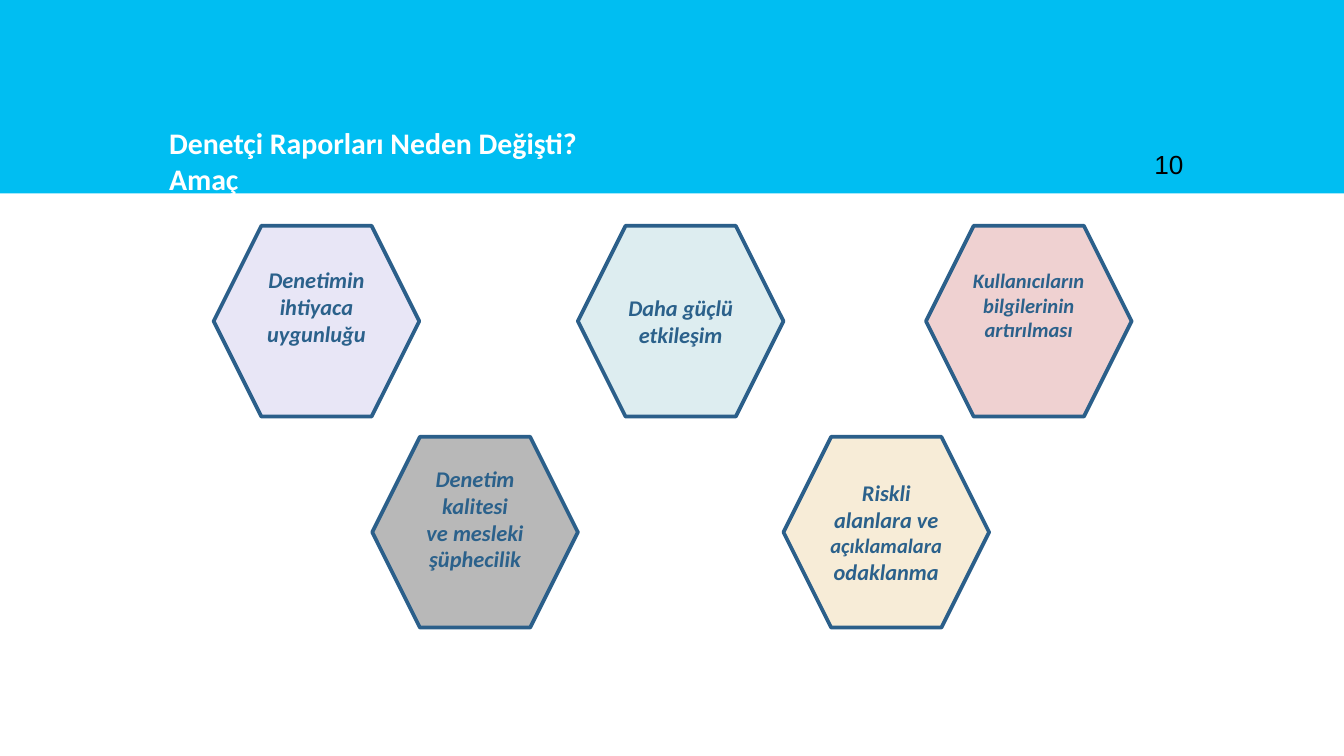
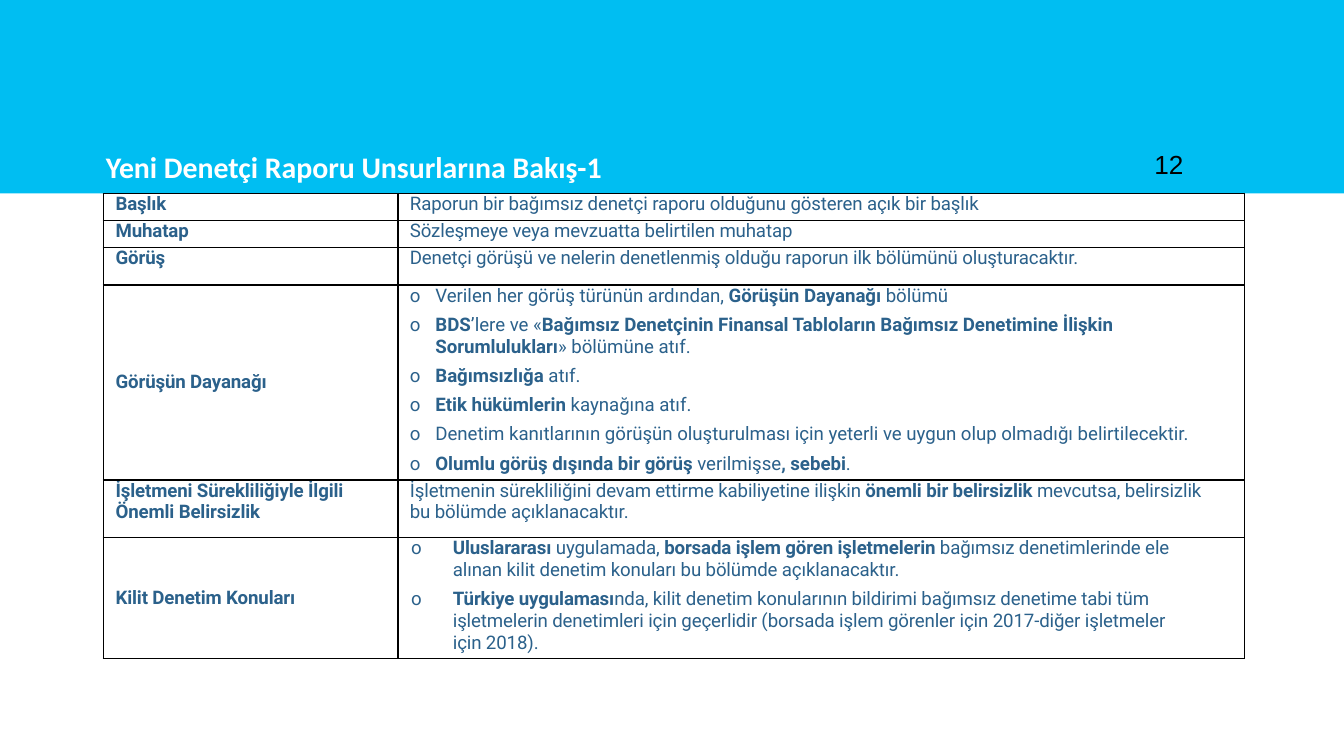
from lxml import etree
from pptx import Presentation
from pptx import util as u
from pptx.dml.color import RGBColor
from pptx.enum import shapes, text
from pptx.oxml import ns

PX = 9144  # EMU per px, 100 px to the inch
MID, LOW = text.MSO_ANCHOR.MIDDLE, text.MSO_ANCHOR.BOTTOM
TOP = text.MSO_ANCHOR.TOP
CYAN, WHITE, BLACK = "00BEF2", "FFFFFF", "000000"
INK, EDGE = "2B618B", "2B5F8A"


def px(n):
    return u.Emu(n * PX)


def rgb(code):
    return RGBColor.from_string(code)


def sub(node, tag, **attrs):
    return etree.SubElement(node, ns.qn(tag), attrs)


class Deck:
    def __init__(self):
        self.prs = Presentation()
        self.prs.slide_width = px(1000)
        self.prs.slide_height = px(1000) * 9 // 16
        self.slide = None

    # Slide with its band, title and number
    def page(self, title, at, num, pad=10):
        self.slide = self.prs.slides.add_slide(self.prs.slide_layouts[6])
        self.shape(shapes.MSO_SHAPE.RECTANGLE, (0, 0, 1000, 144), CYAN)
        self.label(title, at, "Calibri", 16, WHITE, True, pad)
        self.label(num, (849, 71, 60, 73), "Arial", 14, BLACK)

    def shape(self, kind, at, fill, line=None):
        item = self.slide.shapes.add_shape(kind, *map(px, at))
        item.shadow.inherit = False
        item.fill.solid()
        item.fill.fore_color.rgb = rgb(fill)
        if line:
            item.line.color.rgb = rgb(line)
            item.line.width = u.Pt(2)
        else:
            item.line.fill.background()
        return item

    def run(self, para, words, font, size, color, bold=False, slant=False):
        run = para.add_run()
        run.text = words
        run.font.name, run.font.size = font, u.Pt(size)
        run.font.bold, run.font.italic = bold, slant
        run.font.color.rgb = rgb(color)
        return run

    def label(self, words, at, font, size, color, bold=False, pad=10):
        frame = self.slide.shapes.add_textbox(*map(px, at)).text_frame
        frame.word_wrap = True
        frame.vertical_anchor = LOW
        frame.margin_left = frame.margin_right = frame.margin_top = px(10)
        frame.margin_bottom = px(pad)
        para = frame.paragraphs[0]
        for i, line in enumerate(words.split("\n")):
            if i:
                para.add_line_break()
            self.run(para, line, font, size, color, bold)

    # Hexagon; each paragraph is a list of (words, size)
    def hexa(self, left, top, fill, paras, anchor=MID, pad=5):
        item = self.shape(shapes.MSO_SHAPE.HEXAGON, (left, top, 153, 142), fill, EDGE)
        frame = item.text_frame
        frame.word_wrap = True
        frame.vertical_anchor = anchor
        frame.margin_bottom = px(pad)
        for i, runs in enumerate(paras):
            para = frame.add_paragraph() if i else frame.paragraphs[0]
            para.alignment = text.PP_ALIGN.CENTER
            for words, size in runs:
                self.run(para, words, "Calibri", size, INK, True, True)

    # Cell text: parts between asterisks are bold
    def cell(self, cell, lines, anchor=TOP, left=9, hang=0, right=0, track=-5):
        cell.margin_left = cell.margin_right = px(0)
        cell.margin_top = cell.margin_bottom = px(0)
        cell.vertical_anchor = anchor
        props = cell._tc.get_or_add_tcPr()
        for side in "LRTB":
            edge = sub(props, f"a:ln{side}", w="12700")
            sub(sub(edge, "a:solidFill"), "a:srgbClr", val=BLACK)
        cell.fill.background()
        for i, line in enumerate(lines):
            para = cell.text_frame.add_paragraph() if i else cell.text_frame.paragraphs[0]
            ppr = para._p.get_or_add_pPr()
            for name, size in (("marL", left), ("marR", right), ("indent", -hang)):
                ppr.set(name, str(size * PX))
            if hang:
                sub(ppr, "a:buFont", typeface="Roboto")
                sub(ppr, "a:buChar", char="o")
                para.space_after = u.Pt(2)
                if i:
                    para.space_before = u.Pt(2)
            for k, words in enumerate(line.split("*")):
                if words:
                    run = self.run(para, words, "Roboto", 10, INK, k % 2 == 1)
                    run._r.get_or_add_rPr().set("spc", str(track))

    # Table; each row is (height, head, lines, text style)
    def table(self, at, cols, rows):
        grid = self.slide.shapes.add_table(len(rows), len(cols), *map(px, at)).table
        grid.first_row = grid.horz_banding = False
        for col, width in zip(grid.columns, cols):
            col.width = px(width)
        for i, (height, head, lines, style) in enumerate(rows):
            grid.rows[i].height = px(height)
            self.cell(grid.cell(i, 0), [f"*{head}*"], MID if "hang" in style else TOP)
            self.cell(grid.cell(i, 1), lines, **style)


def main():
    deck = Deck()

    # Slide 1: aims
    deck.page("Denetçi Raporları Neden Değişti?\nAmaç", (116, 82, 780, 101), "10", 37)
    deck.hexa(159, 168, "E8E6F6", [[("Denetimin ihtiyaca uygunluğu", 12)]], LOW, 29)
    deck.hexa(430, 168, "DDEDF0", [[("Daha güçlü etkileşim", 12)]])
    deck.hexa(689, 168, "EFD1D1", [[("Kullanıcıların bilgilerinin artırılması", 11)]], pad=29)
    deck.hexa(277, 325, "B8B8B8", [[("Denetim kalitesi", 12)],
                                   [("ve mesleki şüphecilik", 12)]], pad=25)
    deck.hexa(583, 325, "F7ECD7", [[("Riskli alanlara ve ", 12), ("açıklamalara ", 11),
                                   ("odaklanma", 12)]])

    # Slide 2: report parts
    deck.page("Yeni Denetçi Raporu Unsurlarına Bakış-1", (69, 74, 780, 73), "12")
    near = dict(left=28, hang=19, track=0)
    wide = dict(left=41, hang=31, right=41)
    deck.table((77, 144, 849, 346), (219, 630), [
        (20, "Başlık",
         ["Raporun bir bağımsız denetçi raporu olduğunu gösteren açık bir başlık"], {}),
        (20, "Muhatap", ["Sözleşmeye veya mevzuatta belirtilen muhatap"], {}),
        (28, "Görüş",
         ["Denetçi görüşü ve nelerin denetlenmiş olduğu raporun ilk bölümünü "
          "oluşturacaktır."], {}),
        (145, "Görüşün Dayanağı", [
            "Verilen her görüş türünün ardından, *Görüşün Dayanağı *bölümü",
            "*BDS*’lere ve «*Bağımsız Denetçinin Finansal Tabloların Bağımsız "
            "Denetimine İlişkin Sorumlulukları*» bölümüne atıf.",
            "*Bağımsızlığa* atıf.",
            "*Etik hükümlerin *kaynağına atıf.",
            "Denetim kanıtlarının görüşün oluşturulması için yeterli ve uygun olup "
            "olmadığı belirtilecektir.",
            "*Olumlu görüş dışında bir görüş *verilmişse*, sebebi*.",
        ], near),
        (43, "İşletmeni Sürekliliğiyle İlgili Önemli Belirsizlik",
         ["İşletmenin sürekliliğini devam ettirme kabiliyetine ilişkin *önemli bir "
          "belirsizlik *mevcutsa, belirsizlik bu bölümde açıklanacaktır."],
         dict(right=22)),
        (90, "Kilit Denetim Konuları", [
            "*Uluslararası* uygulamada, *borsada işlem gören işletmelerin *bağımsız "
            "denetimlerinde ele alınan kilit denetim konuları bu bölümde "
            "açıklanacaktır.",
            "*Türkiye uygulaması*nda, kilit denetim konularının bildirimi bağımsız "
            "denetime tabi tüm işletmelerin denetimleri için geçerlidir (borsada işlem "
            "görenler için 2017-diğer işletmeler için 2018).",
        ], wide),
    ])
    deck.prs.save("out.pptx")


if __name__ == "__main__":
    main()
